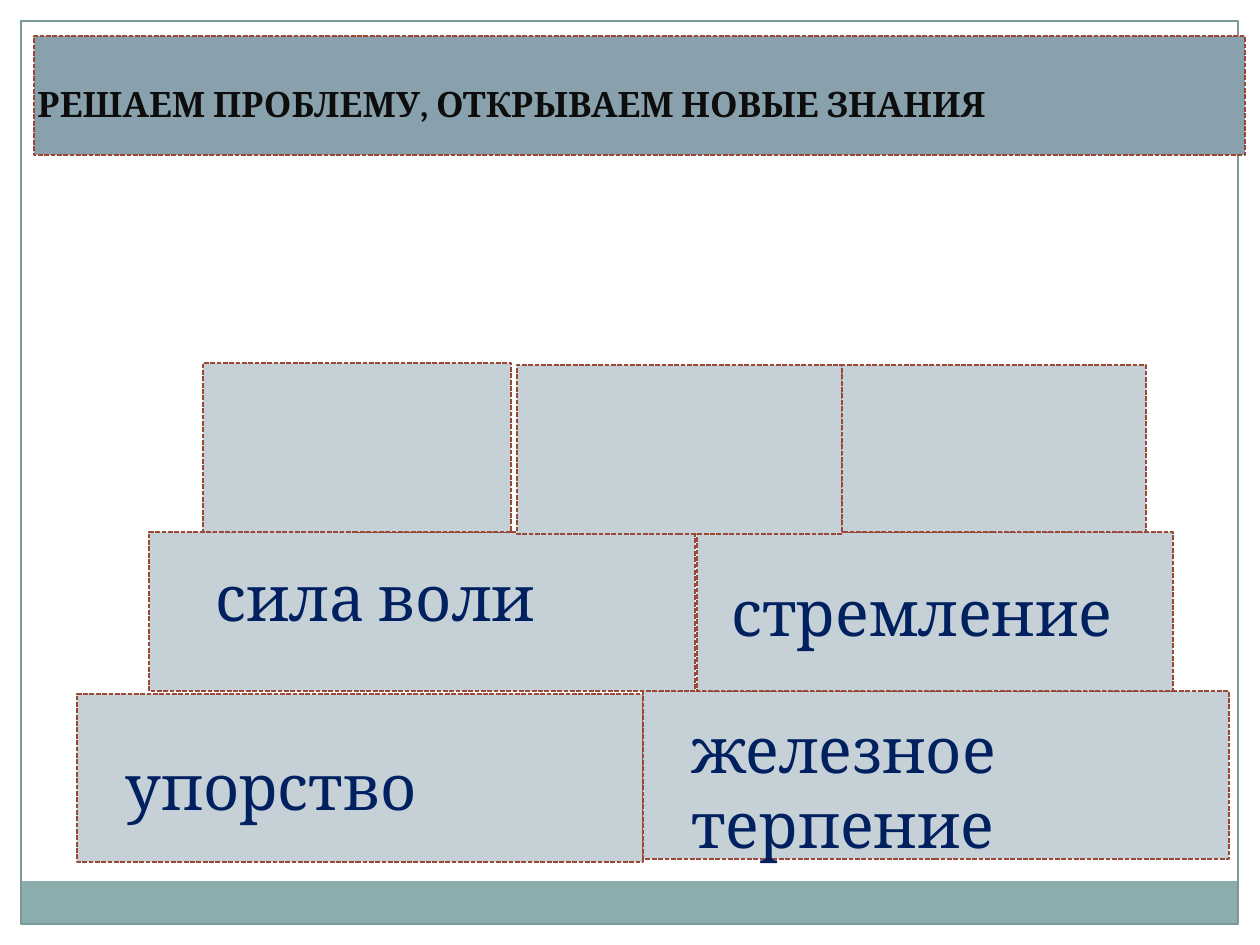
"""Build a slide with a wall of character-trait bricks under a title bar."""
from pptx import Presentation
from pptx import util as u
from pptx.dml.color import RGBColor
from pptx.enum import dml, shapes, text

SCALE = u.Inches(1) / 126
WHITE = RGBColor(0xFF, 0xFF, 0xFF)
TEAL = RGBColor(0x8C, 0xAD, 0xAE)
FRAME = RGBColor(0x7C, 0x99, 0x9A)
SLATE = RGBColor(0x88, 0xA1, 0xAD)
BRICK = RGBColor(0xC5, 0xD1, 0xD7)
RUST = RGBColor(0x9B, 0x49, 0x36)
BLACK = RGBColor(0x0D, 0x0D, 0x0D)
NAVY = RGBColor(0x00, 0x20, 0x60)


def add_rectangle(box, fill=None, line=None):
    shape = slide.shapes.add_shape(
        shapes.MSO_SHAPE.RECTANGLE, *(round(side * SCALE) for side in box))
    shape.shadow.inherit = False
    if fill is None:
        shape.fill.background()
    else:
        shape.fill.solid()
        shape.fill.fore_color.rgb = fill
    if line is None:
        shape.line.fill.background()
    else:
        shape.line.color.rgb = line["color"]
        shape.line.width = u.Pt(line["width"])
        shape.line.dash_style = line["dash"]


def add_label(wording, box, color, font_format):
    label = slide.shapes.add_textbox(*(round(side * SCALE) for side in box))
    label.text_frame.word_wrap = True
    label.text_frame.auto_size = text.MSO_AUTO_SIZE.SHAPE_TO_FIT_TEXT
    run = label.text_frame.paragraphs[0].add_run()
    run.text = wording
    run.font.color.rgb = color
    for name, value in font_format.items():
        setattr(run.font, name, value)


presentation = Presentation()
presentation.slide_width = round(1260 * SCALE)
presentation.slide_height = round(945 * SCALE)
slide = presentation.slides.add_slide(presentation.slide_layouts[6])

dashed = {"color": RUST, "width": 0.9, "dash": dml.MSO_LINE.SQUARE_DOT}
solid = {"color": FRAME, "width": 0.75, "dash": dml.MSO_LINE.SOLID}

for margin in [(0, 0, 1260, 21), (1239, 0, 21, 945), (0, 0, 21, 945)]:
    add_rectangle(margin, WHITE)
add_rectangle((21, 881, 1217, 43), TEAL)
add_rectangle((21, 21, 1217, 903), line=solid)

add_rectangle((34, 36, 1211, 119), SLATE, dashed)
add_label("РЕШАЕМ ПРОБЛЕМУ, ОТКРЫВАЕМ НОВЫЕ ЗНАНИЯ", (25, 76, 1389, 55), BLACK,
          {"name": "Cambria", "size": u.Pt(20), "bold": True})

bricks = [
    (77, 694, 566, 168), (643, 691, 586, 168),
    (149, 532, 546, 159), (697, 532, 476, 159),
    (203, 363, 308, 169), (517, 365, 325, 169), (842, 365, 304, 167),
]
for brick in bricks:
    add_rectangle(brick, BRICK, dashed)

traits = {
    "упорство": (113, 741, 437, 89),
    "стремление": (719, 567, 525, 89),
    "сила воли": (203, 552, 427, 89),
    "железное терпение": (679, 704, 507, 165),
}
for trait, box in traits.items():
    add_label(trait, box, NAVY, {"name": "Cambria", "size": u.Pt(36)})

presentation.save("out.pptx")
